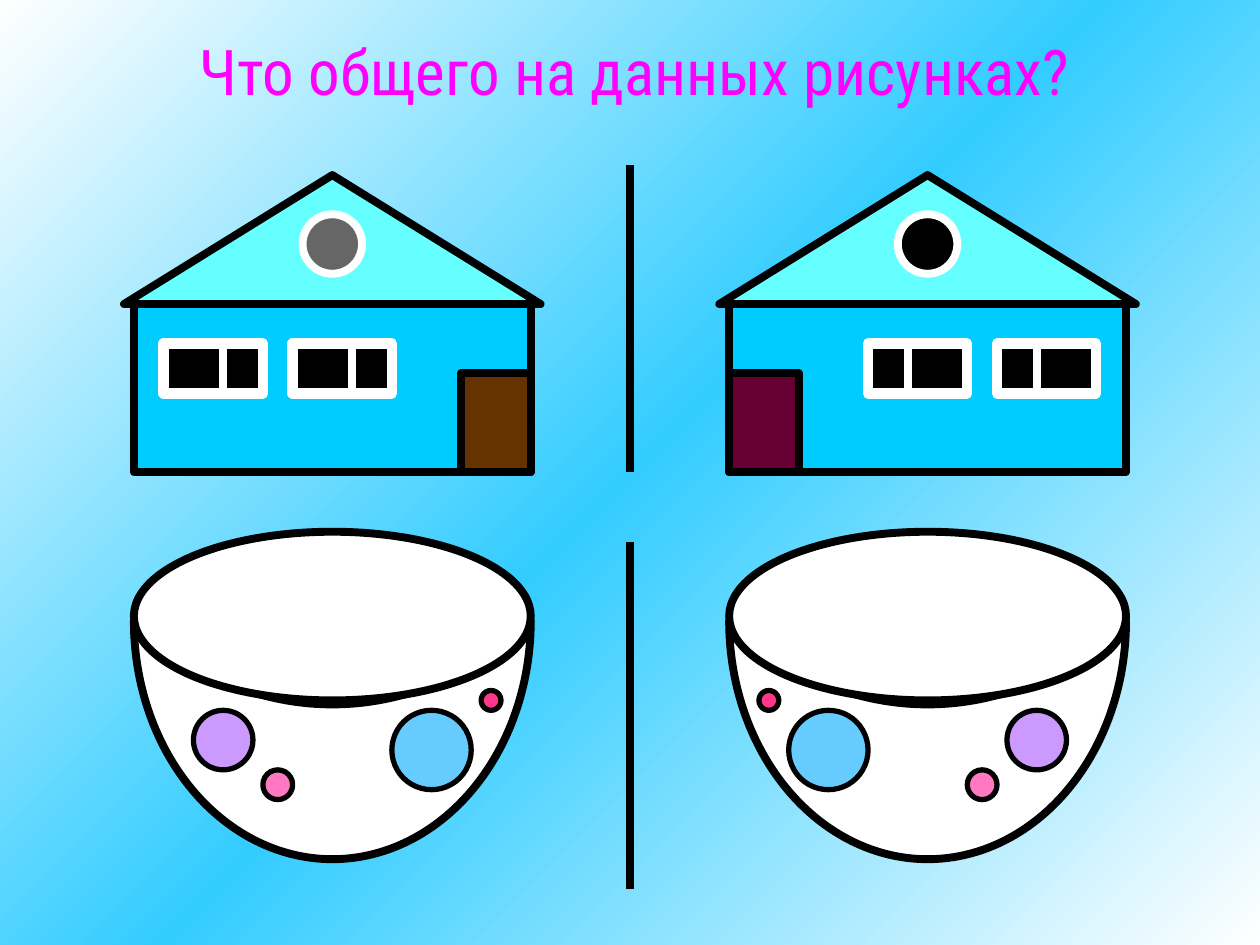
from dataclasses import dataclass

from lxml import etree
from pptx import Presentation
from pptx.dml.color import RGBColor
from pptx.enum.shapes import MSO_CONNECTOR, MSO_SHAPE
from pptx.enum.text import MSO_ANCHOR, PP_ALIGN
from pptx.oxml.ns import qn
from pptx.util import Cm, Pt

RECTANGLE = MSO_SHAPE.RECTANGLE
ELLIPSE = MSO_SHAPE.OVAL
ROOF = MSO_SHAPE.FLOWCHART_EXTRACT
MOON = MSO_SHAPE.MOON
STRAIGHT = MSO_CONNECTOR.STRAIGHT
CENTER = PP_ALIGN.CENTER
TOP = MSO_ANCHOR.TOP

SLIDE_WIDTH, SLIDE_HEIGHT = 25.4, 19.05
AXIS = SLIDE_WIDTH / 2


@dataclass(frozen=True)
class Theme:
    font: str = "Roboto Condensed"
    title_size: float = 36
    title: str = "FF00FF"
    background: tuple = ((0, "FFFFFF"), (50, "33CCFF"), (100, "FFFFFF"))
    black: str = "000000"
    white: str = "FFFFFF"
    wall: str = "00CCFF"
    roof: str = "66FFFF"
    attic_left: str = "666666"
    door_left: str = "663300"
    door_right: str = "660033"
    lilac: str = "CC99FF"
    blue: str = "66CCFF"
    pink: str = "FF79C2"
    crimson: str = "FF388C"
    thin: float = 3
    medium: float = 4.5
    thick: float = 6
    title_outline: float = 2


class Painter:
    def __init__(self, slide, theme):
        self.slide = slide
        self.theme = theme

    def background(self):
        fill = self.slide.background.fill
        fill.gradient()
        fill.gradient_angle = 315
        stops = self.slide.element.find(".//" + qn("a:gsLst"))
        for stop in list(stops):
            stops.remove(stop)
        for percent, color in self.theme.background:
            stop = etree.SubElement(stops, qn("a:gs"), pos=str(percent * 1000))
            etree.SubElement(stop, qn("a:srgbClr"), val=color)

    def title(self, text, left, top, width, height):
        box = self.slide.shapes.add_textbox(Cm(left), Cm(top), Cm(width), Cm(height))
        frame = box.text_frame
        frame.word_wrap = False
        frame.vertical_anchor = TOP
        paragraph = frame.paragraphs[0]
        paragraph.alignment = CENTER
        run = paragraph.add_run()
        run.text = text
        run.font.name = self.theme.font
        run.font.size = Pt(self.theme.title_size)
        run.font.color.rgb = RGBColor.from_string(self.theme.title)
        # Letter outline goes before the fill in the run properties
        outline = etree.Element(qn("a:ln"), w=str(Pt(self.theme.title_outline)))
        outline_fill = etree.SubElement(outline, qn("a:solidFill"))
        etree.SubElement(outline_fill, qn("a:srgbClr"), val=self.theme.black)
        run.font._element.insert(0, outline)

    def shape(self, kind, left, top, width, height, fill, line, weight):
        shape = self.slide.shapes.add_shape(kind, Cm(left), Cm(top), Cm(width), Cm(height))
        shape.shadow.inherit = False
        shape.fill.solid()
        shape.fill.fore_color.rgb = RGBColor.from_string(fill)
        shape.line.color.rgb = RGBColor.from_string(line)
        shape.line.width = Pt(weight)
        return shape

    def mirrored(self, kind, left, top, width, height, fills, line, weight):
        """Draw a shape and its reflection in the middle of the slide."""
        lefts = (left, SLIDE_WIDTH - left - width)
        return [self.shape(kind, x, top, width, height, fill, line, weight)
                for x, fill in zip(lefts, fills)]

    def vertical(self, x, top, bottom, color):
        line = self.slide.shapes.add_connector(STRAIGHT, Cm(x), Cm(top), Cm(x), Cm(bottom))
        line.line.color.rgb = RGBColor.from_string(color)
        line.line.width = Pt(self.theme.medium)
        etree.SubElement(line._element.spPr, qn("a:effectLst"))

    def houses(self):
        theme = self.theme
        black, white, medium = theme.black, theme.white, theme.medium
        self.mirrored(RECTANGLE, 2.7, 6.12, 8, 3.4, (theme.wall,) * 2, black, medium)
        self.mirrored(ROOF, 2.5, 3.53, 8.4, 2.6, (theme.roof,) * 2, black, medium)
        self.mirrored(ELLIPSE, 6.1, 4.32, 1.2, 1.2, (theme.attic_left, black), white, medium)
        self.mirrored(RECTANGLE, 9.3, 7.52, 1.4, 2,
                      (theme.door_left, theme.door_right), black, medium)
        # Windows, each with an off-centre sash bar
        for left in (3.3, 5.9):
            self.mirrored(RECTANGLE, left, 6.93, 2, 1, (black,) * 2, white, theme.thick)
            sash = left + 1.2
            for x in (sash, SLIDE_WIDTH - sash):
                self.vertical(x, 6.93, 7.93, white)

    def bowls(self):
        theme = self.theme
        white = (theme.white,) * 2
        # Bowl bodies are moons turned on their side
        for body in self.mirrored(MOON, 4.3, 10.92, 4.8, 8, white, theme.black, theme.medium):
            body.rotation = 270
            body.adjustments[0] = 0.65
        self.mirrored(ELLIPSE, 2.7, 10.72, 8, 3.4, white, theme.black, theme.medium)
        # Spots: left, top, diameter, colour
        for left, top, size, color in (
            (3.9, 14.32, 1.2, theme.lilac),
            (7.9, 14.32, 1.6, theme.blue),
            (5.3, 15.52, 0.6, theme.pink),
            (9.7, 13.92, 0.4, theme.crimson),
        ):
            self.mirrored(ELLIPSE, left, top, size, size, (color,) * 2, theme.black, theme.thin)


def main():
    presentation = Presentation()
    presentation.slide_width = Cm(SLIDE_WIDTH)
    presentation.slide_height = Cm(SLIDE_HEIGHT)
    slide = presentation.slides.add_slide(presentation.slide_layouts[6])
    painter = Painter(slide, Theme())

    # Background and heading
    painter.background()
    painter.title("Что общего на данных рисунках?", 0.89, 0.53, 23.8, 2.8)

    # Drawings and the dividers between them
    painter.houses()
    painter.bowls()
    for top, bottom in ((3.32, 9.52), (10.92, 17.92)):
        painter.vertical(AXIS, top, bottom, painter.theme.black)

    presentation.save("out.pptx")


if __name__ == "__main__":
    main()
